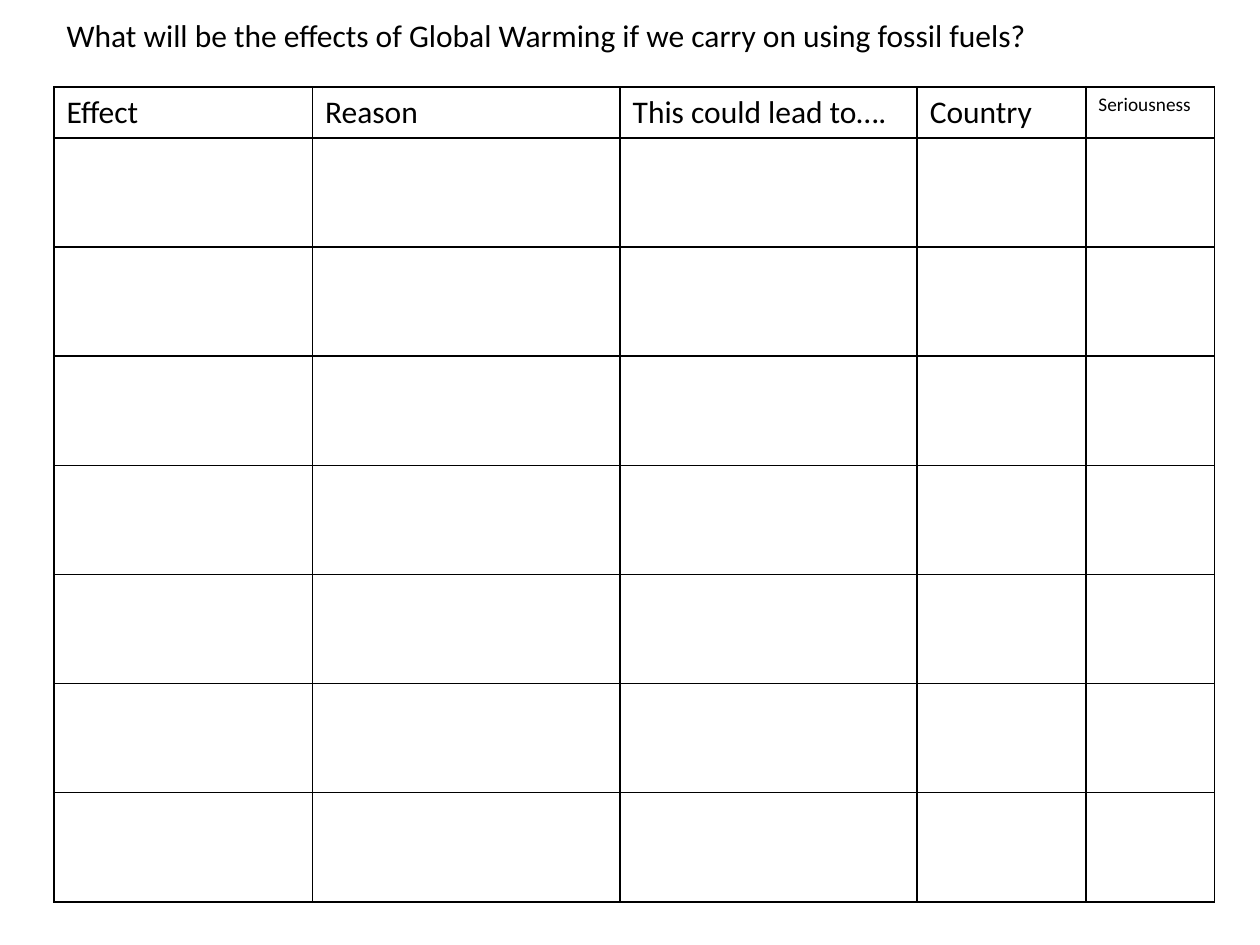
import pptx
import pptx.dml.color
import pptx.enum.text
import pptx.oxml
import pptx.oxml.ns
import pptx.util
from pptx.util import Cm

BLACK = "000000"


def colour(hex_text):
    return pptx.dml.color.RGBColor.from_string(hex_text)


def write(frame, text, size=18, color=BLACK, font="Calibri"):
    paragraph = frame.paragraphs[0]
    paragraph.alignment = pptx.enum.text.PP_ALIGN.LEFT
    run = paragraph.add_run()
    run.text = text
    run.font.name = font
    run.font.size = pptx.util.Pt(size)
    run.font.color.rgb = colour(color)


prs = pptx.Presentation()
prs.slide_width, prs.slide_height = Cm(25.4), Cm(19.05)
slide = prs.slides.add_slide(prs.slide_layouts[5])

# Question
question = slide.shapes.title
question.left, question.top = Cm(1.09), Cm(0.2)
question.width, question.height = Cm(22.8), Cm(1.03)
question.text_frame.word_wrap = True
question.text_frame.auto_size = pptx.enum.text.MSO_AUTO_SIZE.SHAPE_TO_FIT_TEXT
question.text_frame.vertical_anchor = pptx.enum.text.MSO_ANCHOR.TOP
write(question.text_frame,
      "What will be the effects of Global Warming if we carry on using fossil fuels?")

# Worksheet grid: heading, column width, heading size
columns = [
    ("Effect", 5.21, 18),
    ("Reason", 6.2, 18),
    ("This could lead to….", 5.99, 18),
    ("Country", 3.4, 18),
    ("Seriousness", 2.59, 11),
]
heading_height, answer_height, answer_rows = 1.03, 2.2, 7
worksheet = slide.shapes.add_table(
    answer_rows + 1, len(columns), Cm(1.09), Cm(1.75),
    Cm(sum(width for _, width, _ in columns)),
    Cm(heading_height + answer_rows * answer_height)).table
worksheet.first_row = False
worksheet.horz_banding = False

# Row heights and headings
for index, row in enumerate(worksheet.rows):
    row.height = Cm(answer_height if index else heading_height)
for index, (heading, width, size) in enumerate(columns):
    worksheet.columns[index].width = Cm(width)
    write(worksheet.cell(0, index).text_frame, heading, size=size)

# Thin black borders, no fill
for cell in worksheet.iter_cells():
    cell.fill.background()
    properties = cell._tc.get_or_add_tcPr()
    for position, side in enumerate(("lnL", "lnR", "lnT", "lnB")):
        properties.insert(position, pptx.oxml.parse_xml(
            f'<a:{side} {pptx.oxml.ns.nsdecls("a")} w="{pptx.util.Pt(1)}">'
            f'<a:solidFill><a:srgbClr val="{BLACK}"/></a:solidFill></a:{side}>'))

prs.save("out.pptx")
